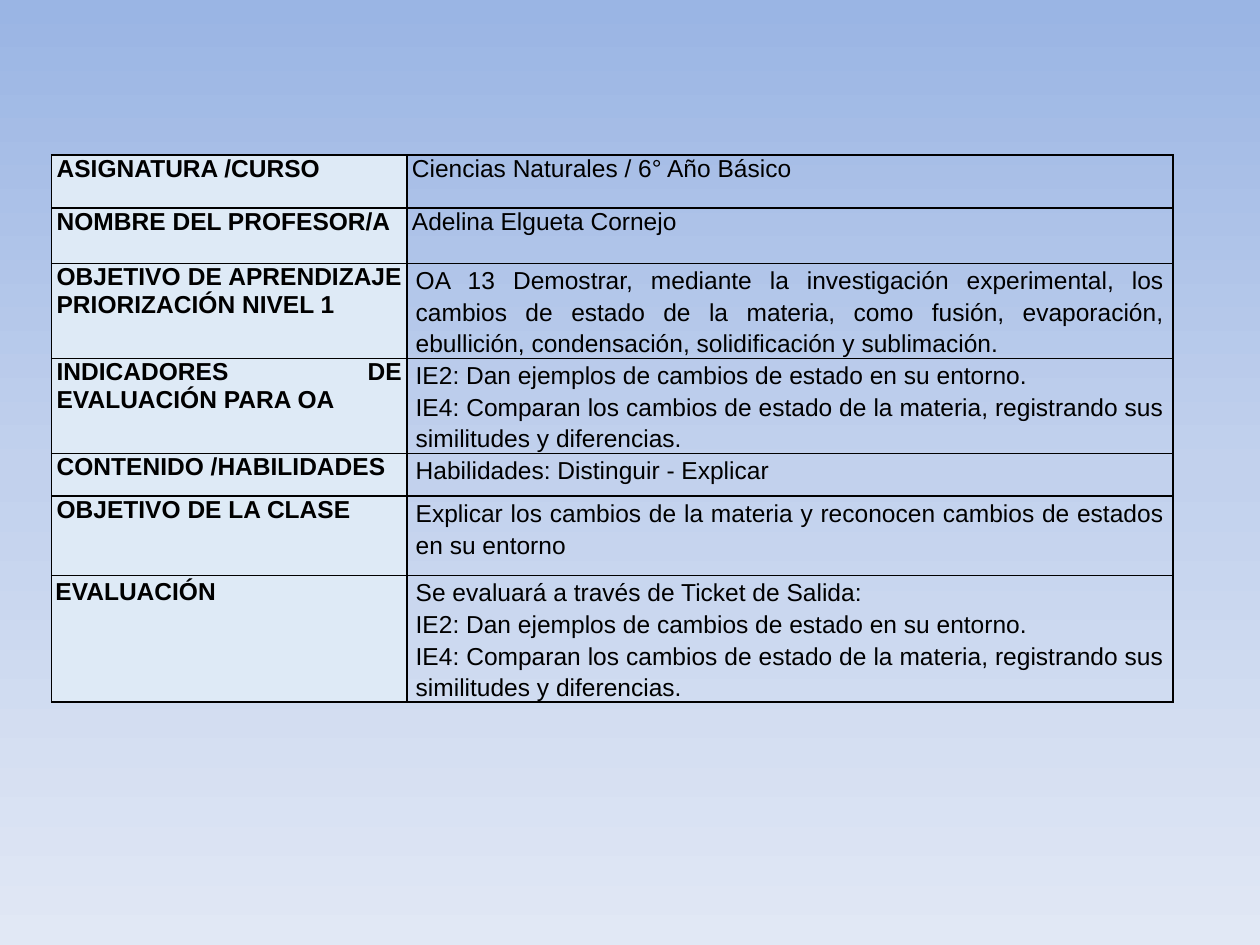
from copy import deepcopy
from dataclasses import dataclass

from lxml.etree import SubElement as Sub
from pptx import Presentation
from pptx.dml.color import RGBColor as Rgb
from pptx.enum.text import PP_ALIGN as Align
from pptx.oxml.ns import qn
from pptx.util import Pt


@dataclass(frozen=True)
class Theme:
    """Colours, type and line sizes of the slide."""
    sky: tuple = ("9AB5E4", "C2D1ED", "E1E8F5")
    label: str = "DEEAF6"
    ink: str = "000000"
    font: str = "Arial"
    size: int = 14
    line: int = 1


class Sheet:
    """Draws styled elements on a slide, on a grid of 1000 columns and 750 rows."""

    def __init__(self, deck, theme):
        self.theme = theme
        self.unit = deck.slide_width // 1000
        self.slide = deck.slides.add_slide(deck.slide_layouts[6])

    def span(self, *counts):
        return [round(count * self.unit) for count in counts]

    def backdrop(self):
        fill = self.slide.background.fill
        fill.gradient()
        fill.gradient_angle = 270
        stops = self.slide._element.find(".//" + qn("a:gsLst"))
        stops.insert(1, deepcopy(stops[0]))
        tones = self.theme.sky
        for i, (stop, tone) in enumerate(zip(fill.gradient_stops, tones)):
            stop.position = i / (len(tones) - 1)
            stop.color.rgb = Rgb.from_string(tone)

    def table(self, box, widths, rows):
        frame = self.slide.shapes.add_table(len(rows), len(widths), *self.span(*box))
        grid = frame.table
        grid.first_row = grid.horz_banding = False
        for column, width in zip(grid.columns, self.span(*widths)):
            column.width = width
        for i, (height, label, text, pads, lead) in enumerate(rows):
            grid.rows[i].height = self.span(height)[0]
            self.cell(grid.cell(i, 0), label, pads[0], bold=True, tone=self.theme.label)
            self.cell(grid.cell(i, 1), text, pads[1], lead=lead)

    def cell(self, cell, text, pad, bold=False, tone=None, lead=None):
        side, top = self.span(*pad)
        cell.margin_left = cell.margin_right = side
        cell.margin_top = cell.margin_bottom = top
        self.border(cell)
        if tone:
            cell.fill.solid()
            cell.fill.fore_color.rgb = Rgb.from_string(tone)
        else:
            cell.fill.background()
        cell.text_frame.text = text
        for para in cell.text_frame.paragraphs:
            para.alignment = Align.JUSTIFY
            para.line_spacing = lead
            for run in para.runs:
                font = run.font
                font.name, font.size, font.bold = self.theme.font, Pt(self.theme.size), bold
                font.color.rgb = Rgb.from_string(self.theme.ink)

    def border(self, cell):
        props = cell._tc.get_or_add_tcPr()
        for edge in "LRTB":
            line = Sub(props, qn("a:ln" + edge), w=str(Pt(self.theme.line)))
            Sub(Sub(line, qn("a:solidFill")), qn("a:srgbClr"), val=self.theme.ink)


def main():
    deck = Presentation()
    deck.slide_width, deck.slide_height = Pt(720), Pt(540)
    sheet = Sheet(deck, Theme())
    sheet.backdrop()

    slim, wide, inner = (4, 0), (7, 0), (3, 2)
    plain, loose = ((slim, slim), None), ((slim, wide), 1.15)
    marks = ("IE2: Dan ejemplos de cambios de estado en su entorno.\n"
             "IE4: Comparan los cambios de estado de la materia, registrando sus "
             "similitudes y diferencias.")
    goal = ("OA 13 Demostrar, mediante la investigación experimental, los cambios de "
            "estado de la materia, como fusión, evaporación, ebullición, condensación, "
            "solidificación y sublimación.")
    aim = "Explicar los cambios de la materia y reconocen cambios de estados en su entorno"
    rows = [
        (42, "ASIGNATURA /CURSO", "Ciencias Naturales / 6° Año Básico", *plain),
        (44, "NOMBRE DEL PROFESOR/A", "Adelina Elgueta Cornejo", *plain),
        (63, "OBJETIVO DE APRENDIZAJE PRIORIZACIÓN NIVEL 1", goal, *loose),
        (55, "INDICADORES DE EVALUACIÓN PARA OA", marks, *loose),
        (34, "CONTENIDO /HABILIDADES", "Habilidades: Distinguir - Explicar", *loose),
        (63, "OBJETIVO DE LA CLASE", aim, *loose),
        (84, "EVALUACIÓN", "Se evaluará a través de Ticket de Salida:\n" + marks,
         (inner, wide), 1.15),
    ]
    sheet.table((41, 123, 890, 452), (282, 608), rows)
    deck.save("out.pptx")


if __name__ == "__main__":
    main()
